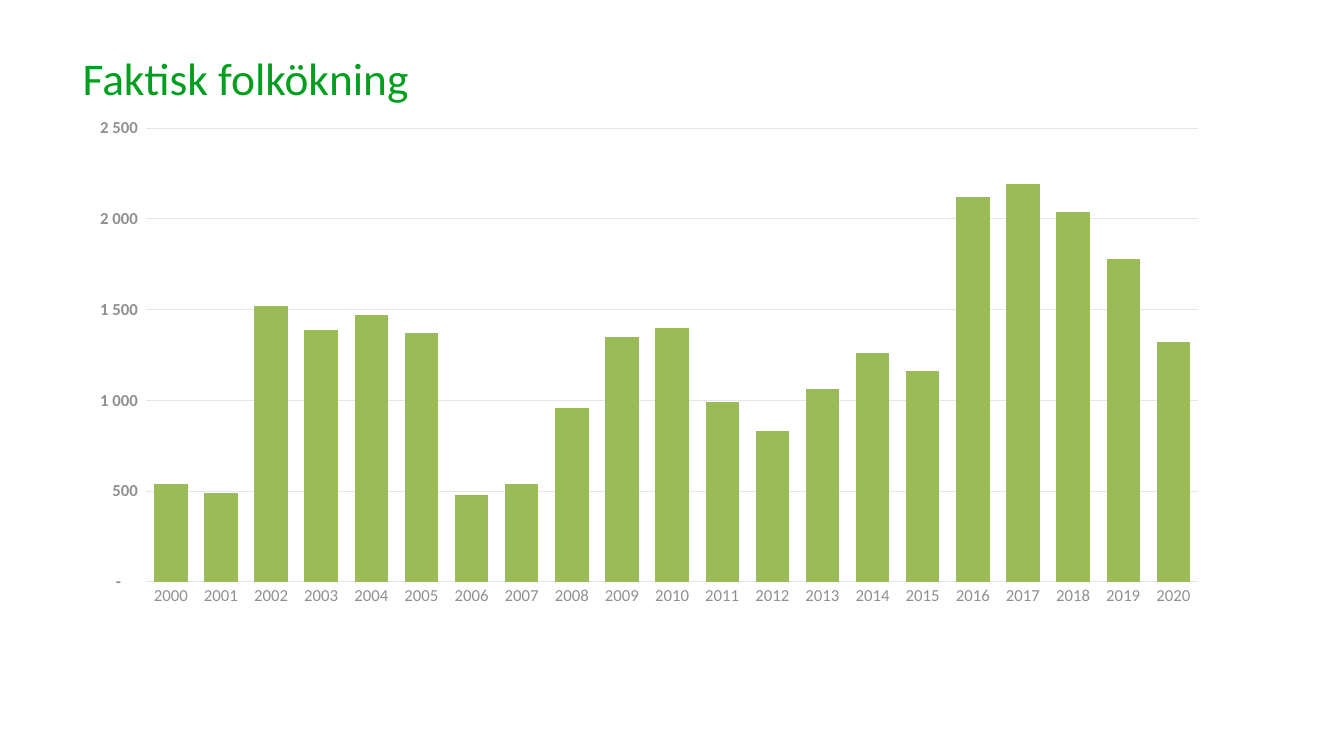
import pptx
import pptx.chart.data
import pptx.dml.color
import pptx.enum.chart
import pptx.enum.text
import pptx.util
from lxml import etree
from pptx.util import Pt

TITLE = "Faktisk folkökning"
FIRST_YEAR = 2000
INCREASES = [540, 490, 1520, 1390, 1470, 1370, 480, 540, 960, 1350, 1400,
             990, 830, 1060, 1260, 1160, 2120, 2190, 2040, 1780, 1320]
NUMBER_FORMAT = r'_-* #\ ##0_-;\-* #\ ##0_-;_-* "-"??_-;_-'
FONT = "Calibri"
TITLE_GREEN, BAR_GREEN = "00A01E", "9BBB59"
LABEL_GREY, LINE_GREY = "909090", "E6E6E6"

SLIDE_SIZE = (960, 540)
TITLE_BOX = (52, 30.2, 820, 44.6)
CHART_BOX = (52.5, 77, 820, 363)
PLOT_AREA = {"x": 0.063, "y": 0.04, "w": 0.917, "h": 0.893}  # shares of the chart


def rgb(hex_color):
    return pptx.dml.color.RGBColor.from_string(hex_color)


def set_font(font, size, color, bold=False):
    font.name = FONT
    font.size = Pt(size)
    font.bold = bold
    font.color.rgb = rgb(color)


def set_line(line, color, width=0.75):
    line.color.rgb = rgb(color)
    line.width = Pt(width)


def add_text(slide, box, text, *, size, color, space_after=0):
    shape = slide.shapes.add_textbox(*map(Pt, box))
    frame = shape.text_frame
    frame.word_wrap = True
    frame.margin_top = frame.margin_bottom = 0
    frame.vertical_anchor = pptx.enum.text.MSO_ANCHOR.BOTTOM
    paragraph = frame.paragraphs[0]
    paragraph.space_after = Pt(space_after)
    run = paragraph.add_run()
    run.text = text
    set_font(run.font, size, color)


def place_plot_area(chart, shares):
    """Fix the inner plot area at the given shares of the chart's size."""
    plot_area = chart.plots[0]._element.getparent()
    namespace = etree.QName(plot_area).namespace
    tag = f"{{{namespace}}}"
    for layout in plot_area.findall(tag + "layout"):
        plot_area.remove(layout)
    layout = etree.Element(tag + "layout")
    plot_area.insert(0, layout)
    manual = etree.SubElement(layout, tag + "manualLayout")
    settings = {"layoutTarget": "inner", "xMode": "edge", "yMode": "edge", **shares}
    for name, value in settings.items():
        etree.SubElement(manual, tag + name, val=str(value))


def add_column_chart(slide):
    data = pptx.chart.data.CategoryChartData()
    data.categories = [str(FIRST_YEAR + i) for i in range(len(INCREASES))]
    data.add_series("Series 1", INCREASES)
    chart = slide.shapes.add_chart(
        pptx.enum.chart.XL_CHART_TYPE.COLUMN_CLUSTERED, *map(Pt, CHART_BOX), data).chart
    chart.has_title = False
    chart.has_legend = False
    set_font(chart.font, 10, "555555")

    plot = chart.plots[0]
    plot.gap_width = 50
    plot.overlap = 100
    plot.vary_by_categories = False
    fill = plot.series[0].format.fill
    fill.solid()
    fill.fore_color.rgb = rgb(BAR_GREEN)

    years, amounts = chart.category_axis, chart.value_axis
    for axis in (years, amounts):
        axis.major_tick_mark = axis.minor_tick_mark = pptx.enum.chart.XL_TICK_MARK.NONE
        set_font(axis.tick_labels.font, 12, LABEL_GREY, bold=axis is amounts)
    set_line(years.format.line, LINE_GREY)
    amounts.format.line.fill.background()
    amounts.has_major_gridlines = True
    set_line(amounts.major_gridlines.format.line, LINE_GREY)
    amounts.minimum_scale, amounts.maximum_scale, amounts.major_unit = 0, 2500, 500
    amounts.tick_labels.number_format = NUMBER_FORMAT
    amounts.tick_labels.number_format_is_linked = False
    place_plot_area(chart, PLOT_AREA)


def main():
    presentation = pptx.Presentation()
    presentation.slide_width, presentation.slide_height = map(Pt, SLIDE_SIZE)
    slide = presentation.slides.add_slide(presentation.slide_layouts[6])
    add_text(slide, TITLE_BOX, TITLE, size=32.4, color=TITLE_GREEN, space_after=6)
    add_column_chart(slide)
    presentation.save("out.pptx")


if __name__ == "__main__":
    main()
